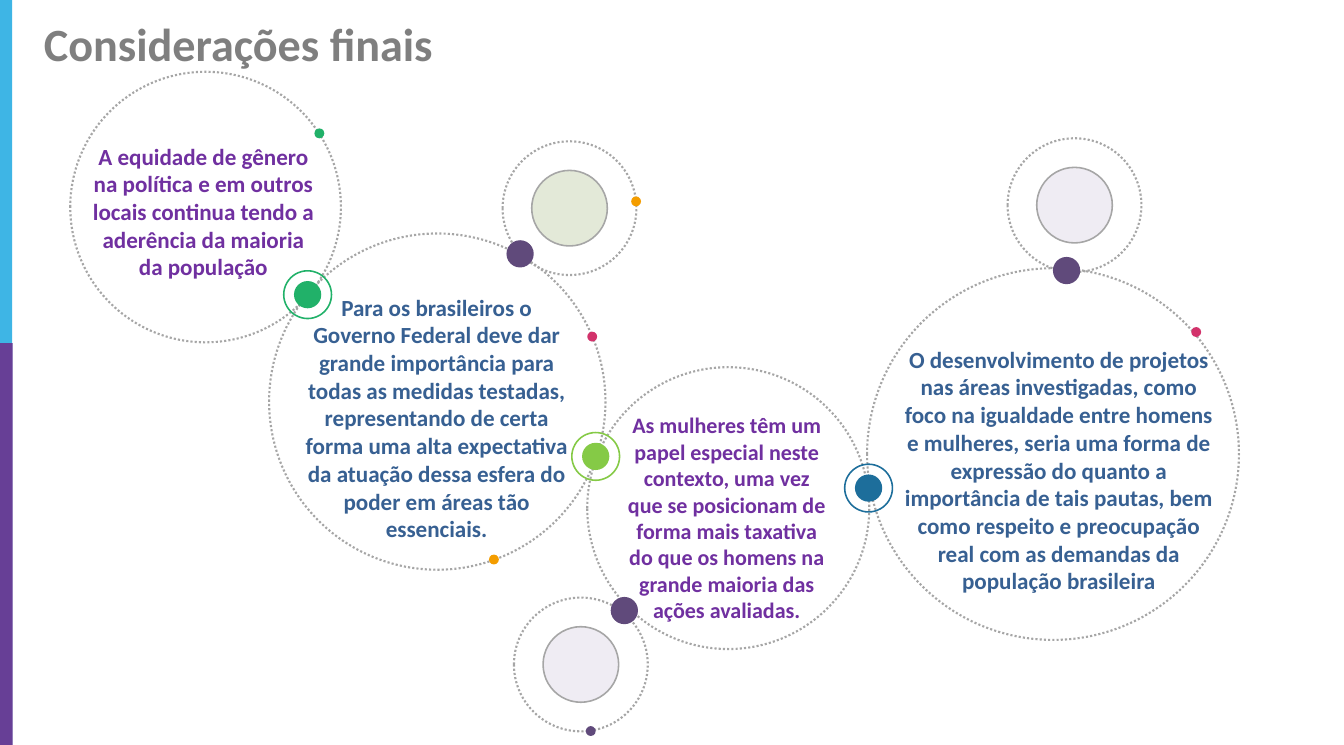
from lxml import etree
from pptx import Presentation
from pptx.dml.color import RGBColor
from pptx.enum import dml, shapes, text
from pptx.oxml import ns
from pptx.util import Pt

GREY, PLUM, GREEN = "A6A6A6", "604A7B", "21B169"
ORANGE, RED, BLUE, VIOLET = "F49D00", "D2326B", "376092", "7030A0"


def rgb(code):
    return RGBColor.from_string(code)


class Deck:
    font = {"name": "Calibri", "bold": True}

    def __init__(self, wide, high):
        self.prs = Presentation()
        self.prs.slide_width, self.prs.slide_height = Pt(wide), Pt(high)
        self.slide = self.prs.slides.add_slide(self.prs.slide_layouts[5])

    def shape(self, kind, box, fill=None, line=None, width=1.5, dash=None, alpha=None):
        item = self.slide.shapes.add_shape(kind, *map(Pt, box))
        item.shadow.inherit = False
        if fill:
            item.fill.solid()
            item.fill.fore_color.rgb = rgb(fill)
        else:
            item.fill.background()
        if alpha:
            tone = item.element.spPr.find(".//" + ns.qn("a:srgbClr"))
            etree.SubElement(tone, ns.qn("a:alpha"), val=str(alpha * 1000))
        if line:
            item.line.color.rgb = rgb(line)
            item.line.width = Pt(width)
            item.line.dash_style = dash
        else:
            item.line.fill.background()

    def bar(self, box, fill):
        self.shape(shapes.MSO_SHAPE.RECTANGLE, box, fill)

    def disc(self, x, y, size, fill=None, **look):
        """Draw a circle around the centre x, y."""
        box = (x - size / 2, y - size / 2, size, size)
        self.shape(shapes.MSO_SHAPE.OVAL, box, fill, **look)

    def ring(self, x, y, size):
        self.disc(x, y, size, line=GREY, width=2, dash=dml.MSO_LINE.ROUND_DOT)

    def moon(self, x, y, fill):
        """Draw a tinted disc inside a dotted ring."""
        self.disc(x, y, 72, fill, line=GREY, alpha=20)
        self.ring(x, y, 127.5)

    def hub(self, x, y, tone):
        """Draw a solid disc inside a thin ring of the same colour."""
        self.disc(x, y, 26, tone)
        self.disc(x, y, 45.5, line=tone)

    def label(self, item, words, size, tone, align, after=0):
        """Put formatted words into a shape and return its text frame."""
        frame = item.text_frame
        frame.word_wrap = True
        frame.vertical_anchor = text.MSO_ANCHOR.TOP
        frame.text = words
        para = frame.paragraphs[0]
        para.alignment, para.space_after = align, Pt(after)
        font = para.runs[0].font
        for key, value in {**self.font, "size": Pt(size)}.items():
            setattr(font, key, value)
        font.color.rgb = rgb(tone)
        return frame

    def title(self, box, words):
        item = self.slide.shapes.title
        item.left, item.top, item.width, item.height = map(Pt, box)
        frame = self.label(item, words, 44, "7F7F7F", text.PP_ALIGN.LEFT)
        frame.auto_size = text.MSO_AUTO_SIZE.NONE

    def note(self, box, words, size, tone, inset=0):
        item = self.slide.shapes.add_textbox(*map(Pt, box))
        frame = self.label(item, words, size, tone, text.PP_ALIGN.CENTER, 2.7)
        frame.margin_left = frame.margin_right = Pt(inset)
        frame.auto_size = text.MSO_AUTO_SIZE.SHAPE_TO_FIT_TEXT


RINGS = [(1003, 432.7, 354.2), (195.8, 197.3, 257.8),
         (416.5, 382.7, 320.4), (693.7, 484.2, 268.6)]
MOONS = [(553.3, 633.2, "B3A2C7"), (542.5, 198.4, "77933C"), (1023.5, 195.5, "B3A2C7")]
JOINTS = [(594.7, 581.8), (495.4, 241.9), (1015.9, 257.8)]
HUBS = [(293, 280.8, GREEN), (827.3, 465.1, "1D6E9B"), (567.4, 434.9, "85CA46")]
DOTS = [(470.5, 533.2, ORANGE), (564.1, 320.8, RED), (304.2, 127.1, GREEN),
        (562.7, 696.6, PLUM), (1139.4, 316.4, RED), (605.9, 191.9, ORANGE)]
NOTES = [
    ((85.7, 131.8, 216, 140.4),
     "A equidade de gênero na política e em outros locais continua tendo a "
     "aderência da maioria da população", 22, VIOLET),
    ((286.6, 275.8, 258.5, 247),
     "Para os brasileiros o Governo Federal deve dar grande importância para "
     "todas as medidas testadas, representando de certa forma uma alta "
     "expectativa da atuação dessa esfera do poder em áreas tão essenciais.", 22, BLUE),
    ((595.4, 388.8, 193.7, 211),
     "As mulheres têm um papel especial neste contexto, uma vez que se "
     "posicionam de forma mais taxativa do que os homens na grande maioria "
     "das ações avaliadas.", 21, VIOLET),
    ((848.2, 325.4, 320.4, 247),
     "O desenvolvimento de projetos nas áreas investigadas, como foco na "
     "igualdade entre homens e mulheres, seria uma forma de expressão do "
     "quanto a importância de tais pautas, bem como respeito e preocupação "
     "real com as demandas da população brasileira", 22, BLUE, 7.2),
]


def main():
    deck = Deck(1280.16, 709.92)
    deck.bar((0, 0, 11.5, 709.92), "3EB5E5")
    deck.bar((0, 326.9, 12, 383.02), "673F96")
    deck.title((34.6, 10.8, 1211, 96.5), "Considerações finais")
    for spot in RINGS:
        deck.ring(*spot)
    for spot in MOONS:
        deck.moon(*spot)
    for x, y in JOINTS:
        deck.disc(x, y, 26, PLUM)
    for spot in HUBS:
        deck.hub(*spot)
    for x, y, tone in DOTS:
        deck.disc(x, y, 9.4, tone)
    for item in NOTES:
        deck.note(*item)
    deck.prs.save("out.pptx")


if __name__ == "__main__":
    main()
